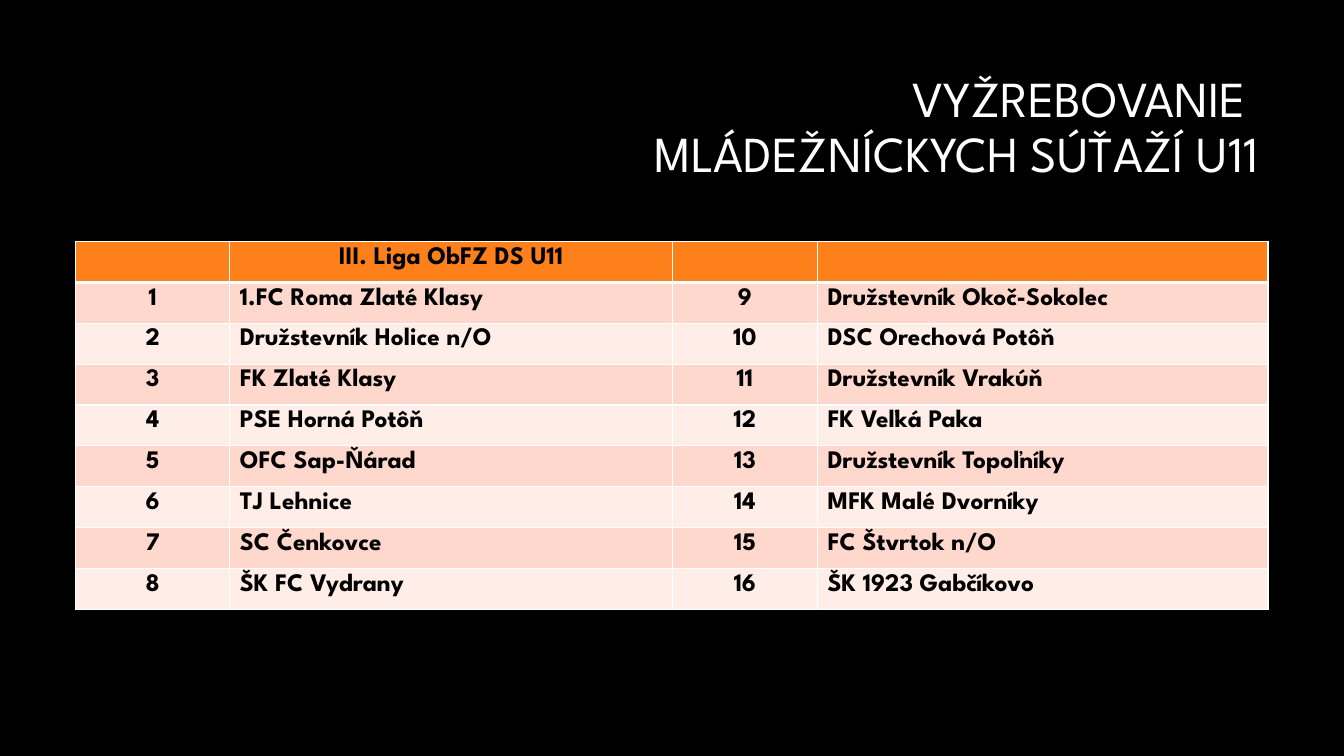
from lxml import etree
from pptx import Presentation
from pptx.dml.color import RGBColor
from pptx.enum import text as t
from pptx.oxml import ns
from pptx.util import Pt

# Content
TITLE = "VYŽREBOVANIE \vMLÁDEŽNÍCKYCH SÚŤAŽÍ U11"
HEAD = "III. Liga ObFZ DS U11"
TEAMS = [
    "1.FC Roma Zlaté Klasy", "Družstevník Holice n/O", "FK Zlaté Klasy",
    "PSE Horná Potôň", "OFC Sap-Ňárad", "TJ Lehnice", "SC Čenkovce",
    "ŠK FC Vydrany", "Družstevník Okoč-Sokolec", "DSC Orechová Potôň",
    "Družstevník Vrakúň", "FK Veľká Paka", "Družstevník Topoľníky",
    "MFK Malé Dvorníky", "FC Štvrtok n/O", "ŠK 1923 Gabčíkovo",
]
FONT = "League Spartan"
WHITE, BLACK, ORANGE = "FFFFFF", "000000", "FE801A"
BANDS = ["FFD8CD", "FFEDE8"]
WIDTHS = [110.2, 316.1, 103.7, 321.8]
ROW = 29.2


def color(code):
    return RGBColor.from_string(code)


def style(par, size, code, align, bold=False):
    par.alignment = align
    for run in par.runs:
        font = run.font
        font.name, font.size, font.bold = FONT, Pt(size), bold
        font.color.rgb = color(code)


def border(cell, side, width):
    props = cell._tc.get_or_add_tcPr()
    line = etree.SubElement(props, ns.qn("a:ln" + side), w=str(Pt(width)))
    fill = etree.SubElement(line, ns.qn("a:solidFill"))
    etree.SubElement(fill, ns.qn("a:srgbClr"), val=WHITE)


# Slide
deck = Presentation()
deck.slide_width, deck.slide_height = Pt(960), Pt(540)
slide = deck.slides.add_slide(deck.slide_layouts[5])
slide.background.fill.solid()
slide.background.fill.fore_color.rgb = color(BLACK)

# Title, lifted by a deep bottom margin
title = slide.shapes.title
title.left, title.top, title.width, title.height = Pt(228.2), Pt(60.5), Pt(678.2), Pt(101.5)
frame = title.text_frame
frame.text = TITLE
frame.word_wrap = True
frame.auto_size = t.MSO_AUTO_SIZE.NONE
frame.vertical_anchor = t.MSO_ANCHOR.MIDDLE
frame.margin_bottom = Pt(42)
frame.paragraphs[0].line_spacing = 0.9
style(frame.paragraphs[0], 36, WHITE, t.PP_ALIGN.RIGHT)

# Rows: number and team, in two halves
half = len(TEAMS) // 2
rows = [["", HEAD, "", ""]]
for i in range(half):
    rows.append([str(i + 1), TEAMS[i], str(i + 1 + half), TEAMS[i + half]])

# Table
table = slide.shapes.add_table(len(rows), len(WIDTHS), Pt(54), Pt(172.5),
                               Pt(sum(WIDTHS)), Pt(ROW * len(rows))).table
table.first_row = True
table.horz_banding = False
for col, width in zip(table.columns, WIDTHS):
    col.width = Pt(width)
for r, row in enumerate(rows):
    table.rows[r].height = Pt(ROW)
    for c, label in enumerate(row):
        cell = table.cell(r, c)
        for side in "LRTB":
            thick = (r, side) in [(0, "B"), (1, "T")]
            border(cell, side, 3 if thick else 1)
        cell.fill.solid()
        cell.fill.fore_color.rgb = color(BANDS[(r - 1) % 2] if r else ORANGE)
        cell.text_frame.text = label
        center = r == 0 or c % 2 == 0
        style(cell.text_frame.paragraphs[0], 18, BLACK,
              t.PP_ALIGN.CENTER if center else t.PP_ALIGN.LEFT, True)

deck.save("out.pptx")
